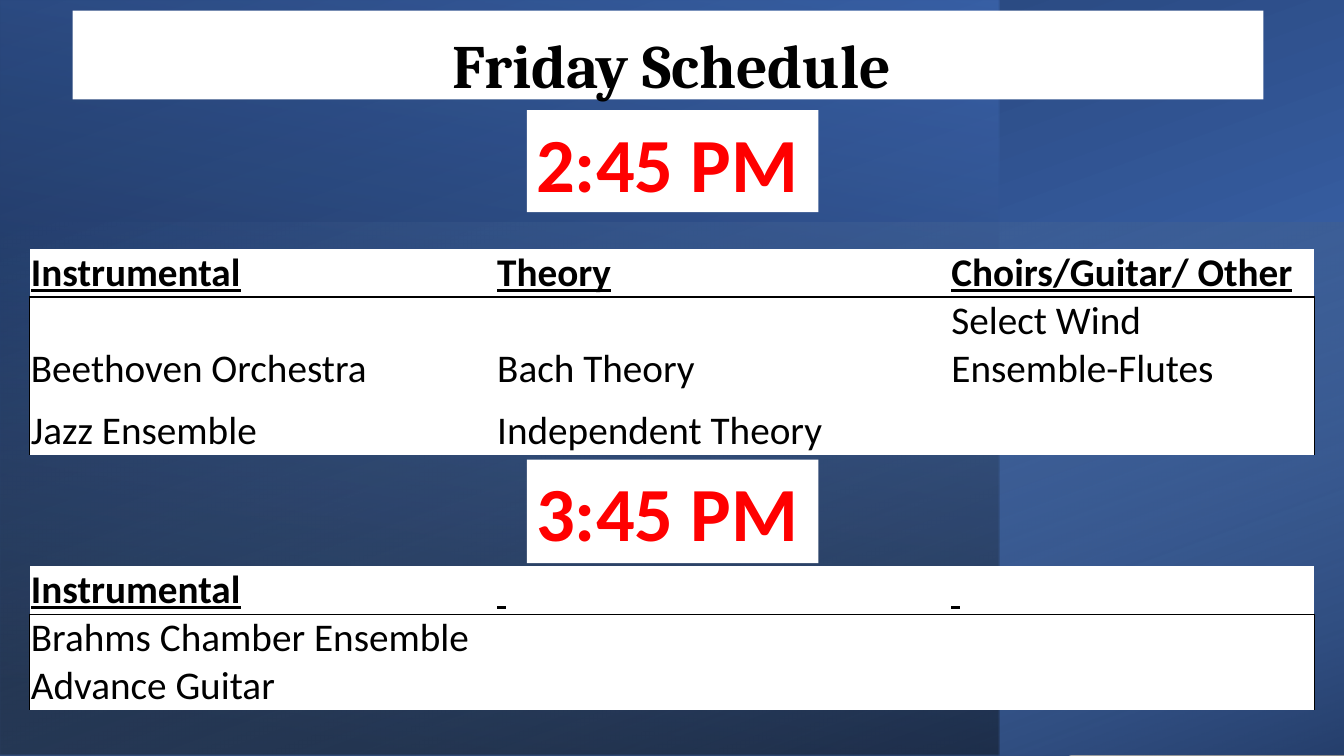
from lxml.etree import SubElement
from pptx import Presentation
from pptx.dml.color import RGBColor
from pptx.enum.shapes import MSO_SHAPE
from pptx.enum.text import MSO_ANCHOR, PP_ALIGN
from pptx.oxml import parse_xml
from pptx.oxml.ns import nsdecls, qn
from pptx.util import Inches, Pt

BLACK = RGBColor(0, 0, 0)
WHITE = RGBColor(255, 255, 255)
RED = RGBColor(255, 0, 0)
BLUE = RGBColor(0x44, 0x72, 0xC4)
NAVY = RGBColor(0x1F, 0x38, 0x64)
PALE_BLUE = RGBColor(0x9C, 0xC2, 0xE5)

NO_STYLE = "{2D5ABB26-0587-4C30-8999-92F81FD0307C}"
COLUMN_WIDTHS = (3.47, 3.38, 2.71)


def write_text(frame, text, size, color=BLACK, font="Calibri", bold=False,
               underline=False, align=PP_ALIGN.LEFT, spacing=None):
    """Fill a text frame, one paragraph for each line of text."""
    for index, line in enumerate(text.split("\n")):
        paragraph = frame.paragraphs[0] if index == 0 else frame.add_paragraph()
        paragraph.alignment = align
        paragraph.line_spacing = spacing
        run = paragraph.add_run()
        run.text = line
        run.font.size = Pt(size)
        run.font.name = font
        run.font.bold = bold
        run.font.underline = underline
        run.font.color.rgb = color


def set_margins(target, left, top, right, bottom):
    target.margin_left, target.margin_right = Inches(left), Inches(right)
    target.margin_top, target.margin_bottom = Inches(top), Inches(bottom)


def add_rectangle(slide, left, top, width, height):
    shape = slide.shapes.add_shape(MSO_SHAPE.RECTANGLE, Inches(left), Inches(top),
                                   Inches(width), Inches(height))
    shape.shadow.inherit = False
    shape.line.fill.background()
    return shape


def add_gradient(slide, left, top, width, height, rotation, angle, stops):
    """Add a mirrored rectangle; stops are (position, color, opacity) in percent."""
    shape = add_rectangle(slide, left, top, width, height)
    shape.rotation = rotation
    properties = shape._element.spPr
    properties.find(qn("a:xfrm")).set("flipH", "1")
    gradient = parse_xml(f"<a:gradFill {nsdecls('a')}><a:gsLst/>"
                         f'<a:lin ang="{angle * 60000}" scaled="0"/></a:gradFill>')
    for position, color, opacity in stops:
        stop = SubElement(gradient[0], qn("a:gs"), pos=str(position * 1000))
        fill = SubElement(stop, qn("a:srgbClr"), val=str(color))
        SubElement(fill, qn("a:alpha"), val=str(opacity * 1000))
    properties.find(qn("a:prstGeom")).addnext(gradient)


def add_label(slide, text, left, top, width, height, **text_format):
    shape = add_rectangle(slide, left, top, width, height)
    shape.fill.solid()
    shape.fill.fore_color.rgb = WHITE
    frame = shape.text_frame
    frame.word_wrap = True
    frame.vertical_anchor = MSO_ANCHOR.TOP
    set_margins(frame, 0.07, 0.04, 0.07, 0.04)
    write_text(frame, text, bold=True, **text_format)
    return shape


def set_borders(cell, sides):
    """Draw thin black lines on the named sides and clear the others."""
    properties = cell._tc.get_or_add_tcPr()
    for index, side in enumerate("LRTB"):
        fill = "<a:noFill/>"
        if side in sides:
            fill = f'<a:solidFill><a:srgbClr val="{BLACK}"/></a:solidFill>'
        properties.insert(index, parse_xml(
            f'<a:ln{side} {nsdecls("a")} w="9525">{fill}</a:ln{side}>'))


def body_sides(row_index, column_index):
    sides = "T" if row_index == 1 else ""
    if column_index == 0:
        sides += "L"
    if column_index == len(COLUMN_WIDTHS) - 1:
        sides += "R"
    return sides


def add_schedule(slide, top, heights, rows):
    """Add a table with an underlined header above a framed body."""
    frame = slide.shapes.add_table(len(rows), len(COLUMN_WIDTHS), Inches(0.22),
                                   Inches(top), Inches(sum(COLUMN_WIDTHS)),
                                   Inches(sum(heights)))
    table = frame.table
    table.first_row = table.horz_banding = False
    table._tbl.tblPr.find(qn("a:tableStyleId")).text = NO_STYLE
    for column, width in zip(table.columns, COLUMN_WIDTHS):
        column.width = Inches(width)
    for row_index, texts in enumerate(rows):
        table.rows[row_index].height = Inches(heights[row_index])
        header = row_index == 0
        for column_index, text in enumerate(texts):
            cell = table.cell(row_index, column_index)
            cell.fill.solid()
            cell.fill.fore_color.rgb = WHITE
            cell.vertical_anchor = MSO_ANCHOR.BOTTOM
            set_margins(cell, 0.01, 0, 0.01, 0)
            write_text(cell.text_frame, text, 21, bold=header, underline=header)
            set_borders(cell, "B" if header else body_sides(row_index, column_index))


def add_background(slide):
    add_gradient(slide, 2.19, -2.19, 5.62, 10, 270, 200,
                 [(0, BLUE, 100), (8, BLUE, 100), (100, NAVY, 100)])
    add_gradient(slide, 0, 0, 7.44, 5.62, 180, 80,
                 [(0, BLACK, 52), (8, BLACK, 52), (100, BLUE, 52)])
    add_gradient(slide, 2.99, -1.34, 4.01, 10, 270, 20,
                 [(0, PALE_BLUE, 0), (100, BLACK, 46)])


def main():
    presentation = Presentation()
    presentation.slide_width, presentation.slide_height = Inches(10), Inches(10 * 9 / 16)
    slide = presentation.slides.add_slide(presentation.slide_layouts[6])

    add_background(slide)
    title = add_label(slide, "Friday Schedule", 0.54, 0.08, 8.86, 0.66, size=33,
                      font="Cambria", align=PP_ALIGN.CENTER, spacing=1.15)
    title_properties = title.text_frame.paragraphs[0]._p.get_or_add_pPr()
    title_properties.set("marL", str(Inches(0.06)))

    add_label(slide, "2:45 PM", 3.92, 0.82, 2.17, 0.76, size=41, color=RED)
    add_schedule(slide, 1.85, (0.36, 0.38, 0.46), [
        ("Instrumental", "Theory", "Choirs/Guitar/ Other"),
        ("Beethoven Orchestra", "Bach Theory", "Select Wind Ensemble-Flutes"),
        ("Jazz Ensemble", "Independent Theory", ""),
    ])
    add_label(slide, "3:45 PM", 3.92, 3.42, 2.17, 0.77, size=41, color=RED)
    add_schedule(slide, 4.21, (0.36, 0.38), [
        ("Instrumental", " ", " "),
        ("Brahms Chamber Ensemble\nAdvance Guitar", "", ""),
    ])
    presentation.save("out.pptx")


if __name__ == "__main__":
    main()
